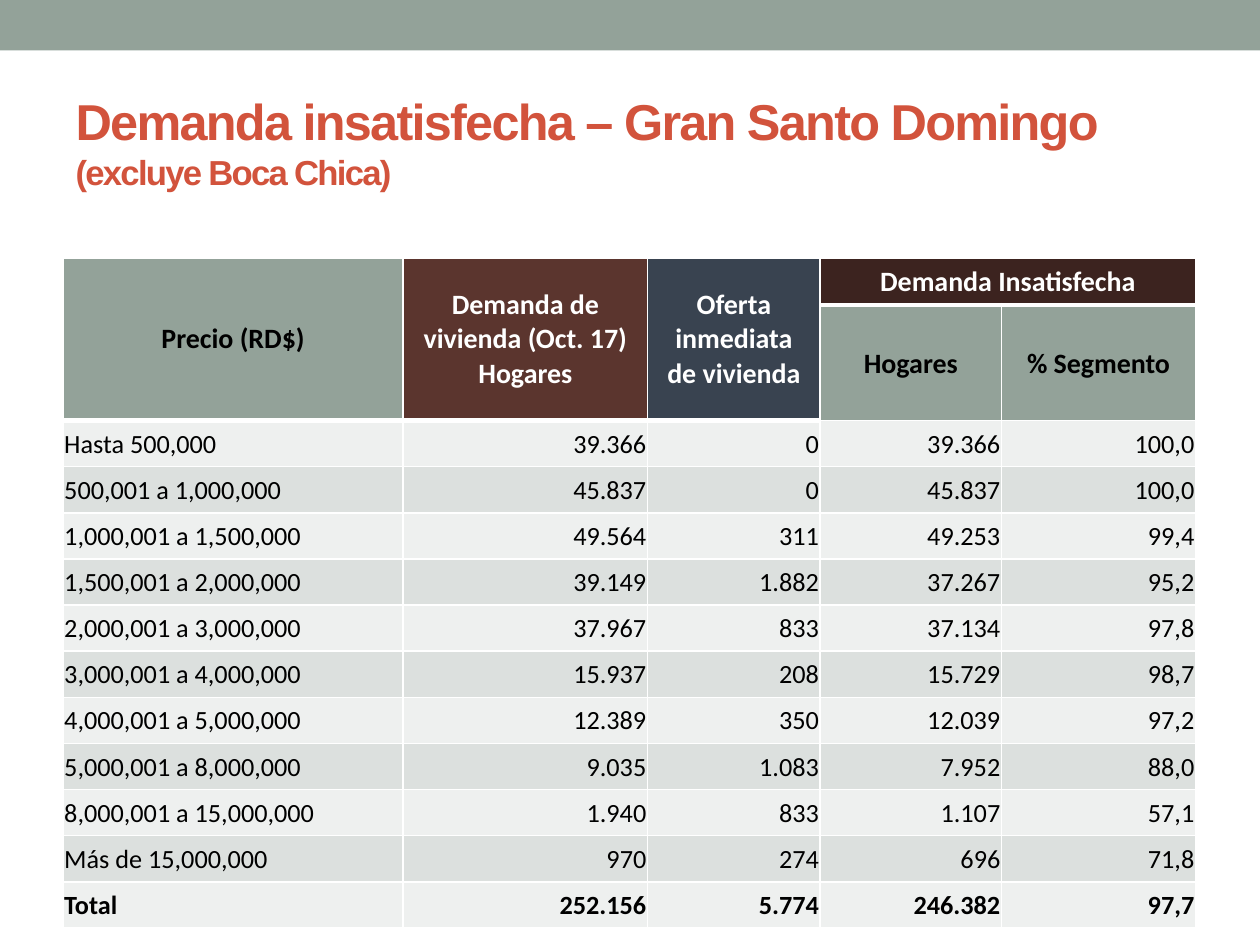
from lxml.etree import SubElement
from pptx import Presentation
from pptx.dml.color import RGBColor
from pptx.enum.shapes import MSO_SHAPE
from pptx.enum.text import MSO_ANCHOR, PP_ALIGN
from pptx.oxml.ns import qn
from pptx.util import Inches, Pt

SAGE = RGBColor(0x93, 0xA2, 0x99)
RUST = RGBColor(0xD2, 0x53, 0x3C)
BROWN = RGBColor(0x5B, 0x35, 0x2E)
SLATE = RGBColor(0x39, 0x43, 0x50)
DARK_BROWN = RGBColor(0x3C, 0x23, 0x1F)
LIGHT = RGBColor(0xEE, 0xF0, 0xEF)
MEDIUM = RGBColor(0xDC, 0xE0, 0xDE)
WHITE = RGBColor(0xFF, 0xFF, 0xFF)
BLACK = RGBColor(0x00, 0x00, 0x00)

COLUMN_WIDTHS = [2.7, 1.94, 1.37, 1.44, 1.54]
HEADER_HEIGHTS = [0.36, 0.91]
BODY_HEIGHT = 4.03

TOP_HEADERS = [
    ("Precio (RD$)", SAGE, BLACK, (1, 0)),
    ("Demanda de vivienda (Oct. 17) Hogares", BROWN, WHITE, (1, 1)),
    ("Oferta inmediata de vivienda", SLATE, WHITE, (1, 2)),
    ("Demanda Insatisfecha", DARK_BROWN, WHITE, (0, 4)),
]
SUB_HEADERS = ["Hogares", "% Segmento"]
PRICE_ROWS = [
    ("Hasta 500,000", "39.366", "0", "39.366", "100,0"),
    ("500,001 a 1,000,000", "45.837", "0", "45.837", "100,0"),
    ("1,000,001 a 1,500,000", "49.564", "311", "49.253", "99,4"),
    ("1,500,001 a 2,000,000", "39.149", "1.882", "37.267", "95,2"),
    ("2,000,001 a 3,000,000", "37.967", "833", "37.134", "97,8"),
    ("3,000,001 a 4,000,000", "15.937", "208", "15.729", "98,7"),
    ("4,000,001 a 5,000,000", "12.389", "350", "12.039", "97,2"),
    ("5,000,001 a 8,000,000", "9.035", "1.083", "7.952", "88,0"),
    ("8,000,001 a 15,000,000", "1.940", "833", "1.107", "57,1"),
    ("Más de 15,000,000", "970", "274", "696", "71,8"),
    ("Total", "252.156", "5.774", "246.382", "97,7"),
]


def add_text(para, text, *, size, color, font="Calibri", bold=False,
             align=PP_ALIGN.LEFT, spacing=None):
    para.alignment = align
    span = para.add_run()
    span.text = text
    span.font.name = font
    span.font.size = Pt(size)
    span.font.bold = bold
    span.font.color.rgb = color
    if spacing is not None:
        span.font._element.set("spc", str(int(spacing * 100)))


def add_bar(page):
    bar = page.shapes.add_shape(MSO_SHAPE.RECTANGLE, 0, 0, Inches(10), Inches(0.4))
    bar.shadow.inherit = False
    bar.fill.solid()
    bar.fill.fore_color.rgb = SAGE
    bar.line.fill.background()


def fill_title(page):
    title = page.shapes.title
    title.left, title.top = Inches(0.5), Inches(0.58)
    title.width, title.height = Inches(9), Inches(1.08)
    title.text_frame.vertical_anchor = MSO_ANCHOR.MIDDLE
    para = title.text_frame.paragraphs[0]
    style = dict(color=RUST, font="Arial", bold=True, spacing=-1)
    add_text(para, "Demanda insatisfecha – Gran Santo Domingo ", size=28.8, **style)
    para.add_line_break()
    add_text(para, "(excluye Boca Chica)", size=19.8, **style)


def set_borders(cell, bottom):
    properties = cell._tc.get_or_add_tcPr()
    for side, width in (("L", 1), ("R", 1), ("T", 1), ("B", bottom)):
        line = SubElement(properties, qn(f"a:ln{side}"), w=str(Pt(width)))
        fill = SubElement(line, qn("a:solidFill"))
        SubElement(fill, qn("a:srgbClr"), val=str(WHITE))


def fill_cell(cell, text, fill, *, tight=True, bottom=1, **style):
    set_borders(cell, bottom)
    cell.fill.solid()
    cell.fill.fore_color.rgb = fill
    cell.vertical_anchor = MSO_ANCHOR.MIDDLE
    if tight:
        cell.margin_left = cell.margin_right = cell.margin_top = Inches(0.01)
        cell.margin_bottom = 0
    add_text(cell.text_frame.paragraphs[0], text, **style)


def fill_headers(table):
    style = dict(size=16, bold=True, align=PP_ALIGN.CENTER)
    for column, (text, fill, color, end) in enumerate(TOP_HEADERS):
        cell = table.cell(0, column)
        cell.merge(table.cell(*end))
        fill_cell(cell, text, fill, tight=False, bottom=3, color=color, **style)
    for column, text in enumerate(SUB_HEADERS, start=3):
        fill_cell(table.cell(1, column), text, SAGE, color=BLACK, **style)


def fill_body(table):
    for index, values in enumerate(PRICE_ROWS):
        fill = MEDIUM if index % 2 else LIGHT
        for column, text in enumerate(values):
            fill_cell(table.cell(index + len(HEADER_HEIGHTS), column), text, fill,
                      size=15, color=BLACK, bold=values[0] == "Total",
                      align=PP_ALIGN.RIGHT if column else PP_ALIGN.LEFT)


def add_demand_table(page):
    heights = HEADER_HEIGHTS + [BODY_HEIGHT / len(PRICE_ROWS)] * len(PRICE_ROWS)
    table = page.shapes.add_table(
        len(heights), len(COLUMN_WIDTHS), Inches(0.5), Inches(2.05),
        Inches(sum(COLUMN_WIDTHS)), Inches(sum(heights))).table
    for column, width in zip(table.columns, COLUMN_WIDTHS):
        column.width = Inches(width)
    for row, height in zip(table.rows, heights):
        row.height = Inches(height)
    fill_headers(table)
    fill_body(table)


def main():
    deck = Presentation()
    deck.slide_width, deck.slide_height = Inches(10), Inches(7.5)
    page = deck.slides.add_slide(deck.slide_layouts[5])
    add_bar(page)
    fill_title(page)
    add_demand_table(page)
    deck.save("out.pptx")


if __name__ == "__main__":
    main()
